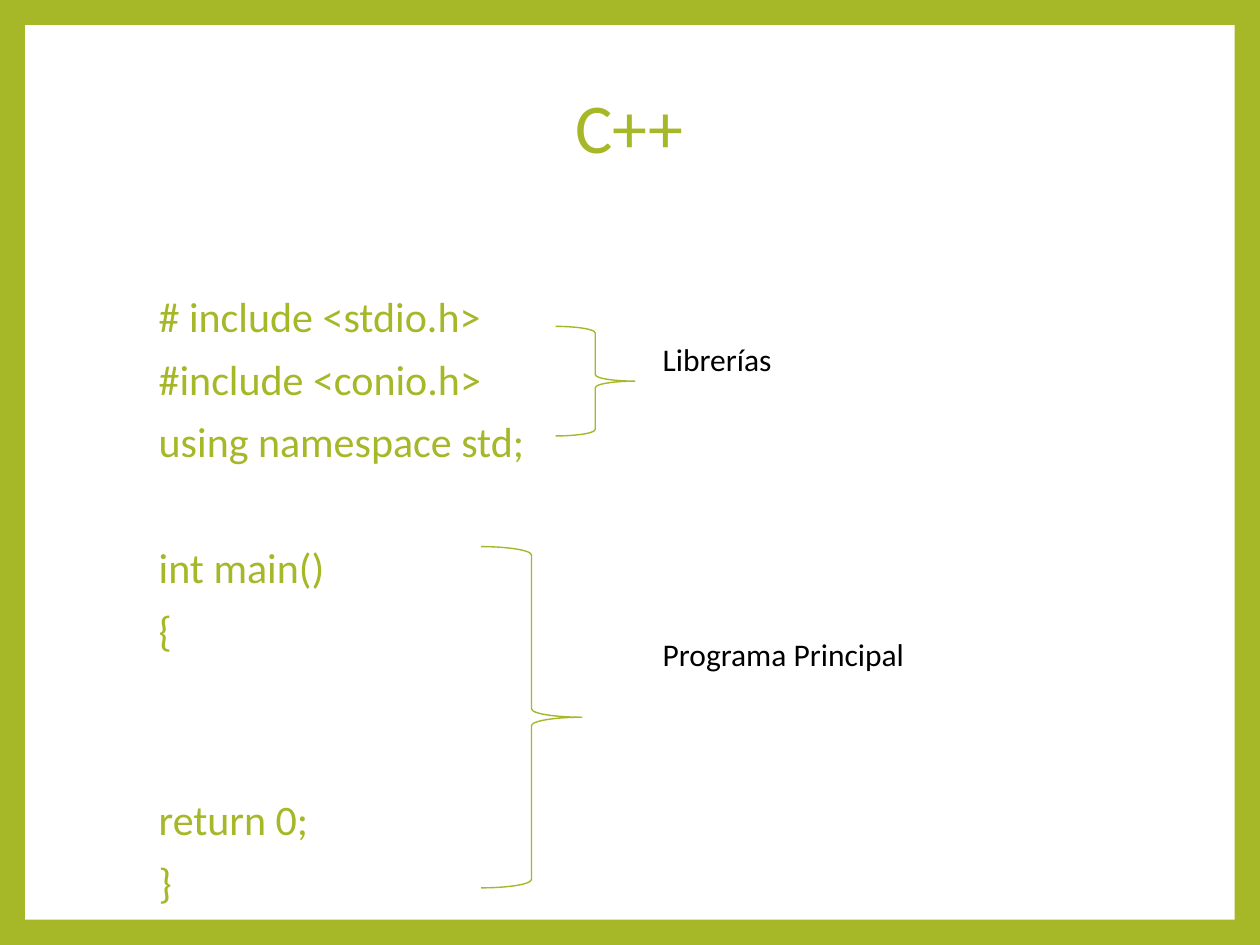
"""Build a slide that labels the two parts of a C++ program."""
from pptx import Presentation
from pptx import util as u
from pptx.dml.color import RGBColor
from pptx.enum import shapes, text

GREEN, WHITE, BLACK = "A6B727", "FFFFFF", "000000"
LINE_SPACING = 0.9
PARAGRAPH_GAP = 10
LINE_PITCH = 36
CODE_GROUPS = [
    ["# include <stdio.h>", "#include <conio.h>", "using namespace std;"],
    ["int main()", "{"],
    ["return 0;", "}"],
]
GROUP_GAPS = [0, 1, 2]


def color(value):
    """Turn a hex string into a colour."""
    return RGBColor.from_string(value)


def apply_format(target, values):
    """Set each attribute named in a dict of format values."""
    for name, value in values.items():
        setattr(target, name, value)


def paint(fill, value):
    """Give a fill one solid colour."""
    fill.solid()
    fill.fore_color.rgb = color(value)


def add_text(slide, box, lines, size, value, frame_format=None, paragraph_format=None):
    """Add a text box from (line, space before) pairs."""
    frame = slide.shapes.add_textbox(*map(u.Cm, box)).text_frame
    apply_format(frame, {"word_wrap": True, **(frame_format or {})})
    for index, (line, gap) in enumerate(lines):
        paragraph = frame.paragraphs[0] if index == 0 else frame.add_paragraph()
        paragraph.text = line
        apply_format(paragraph, {"space_before": u.Pt(gap), **(paragraph_format or {})})
        apply_format(paragraph.font, {"name": "Calibri", "size": u.Pt(size)})
        paragraph.font.color.rgb = color(value)


def add_panel(slide, box):
    """Add the white panel that leaves a green border around it."""
    panel = slide.shapes.add_shape(shapes.MSO_SHAPE.RECTANGLE, *map(u.Cm, box))
    panel.shadow.inherit = False
    paint(panel.fill, WHITE)
    panel.line.fill.background()


def add_brace(slide, box):
    """Add a thin green brace that opens to the left."""
    brace = slide.shapes.add_shape(shapes.MSO_SHAPE.RIGHT_BRACE, *map(u.Cm, box))
    brace.shadow.inherit = False
    brace.fill.background()
    brace.line.color.rgb = color(GREEN)
    brace.line.width = u.Pt(0.79)


def code_lines():
    """Pair each code line with its space before, wider between groups."""
    lines = []
    for group, skipped in zip(CODE_GROUPS, GROUP_GAPS):
        for index, line in enumerate(group):
            extra = skipped * LINE_PITCH if index == 0 else 0
            lines.append((line, PARAGRAPH_GAP + extra if lines else 0))
    return lines


def main():
    """Build and save the slide."""
    presentation = Presentation()
    apply_format(presentation, {"slide_width": u.Cm(25.4), "slide_height": u.Cm(19.05)})
    slide = presentation.slides.add_slide(presentation.slide_layouts[6])
    paint(slide.background.fill, GREEN)
    add_panel(slide, (0.51, 0.51, 24.38, 18.03))

    add_text(slide, (4.45, 0.99, 16.48, 3.3), [("C++", 0)], 40, GREEN,
             {"vertical_anchor": text.MSO_ANCHOR.MIDDLE},
             {"alignment": text.PP_ALIGN.CENTER, "line_spacing": LINE_SPACING})
    add_text(slide, (2.95, 5.84, 16.48, 8.61), code_lines(), 24, GREEN,
             paragraph_format={"line_spacing": LINE_SPACING})

    for label, label_top, brace_box in [
        ("Librerías", 6.73, (11.2, 6.58, 1.6, 2.21)),
        ("Programa Principal", 12.67, (9.7, 11.02, 2.03, 6.88)),
    ]:
        add_brace(slide, brace_box)
        add_text(slide, (13.11, label_top, 8.41, 1.02), [(label, 0)], 18, BLACK,
                 {"auto_size": text.MSO_AUTO_SIZE.SHAPE_TO_FIT_TEXT})
    presentation.save("out.pptx")


if __name__ == "__main__":
    main()
